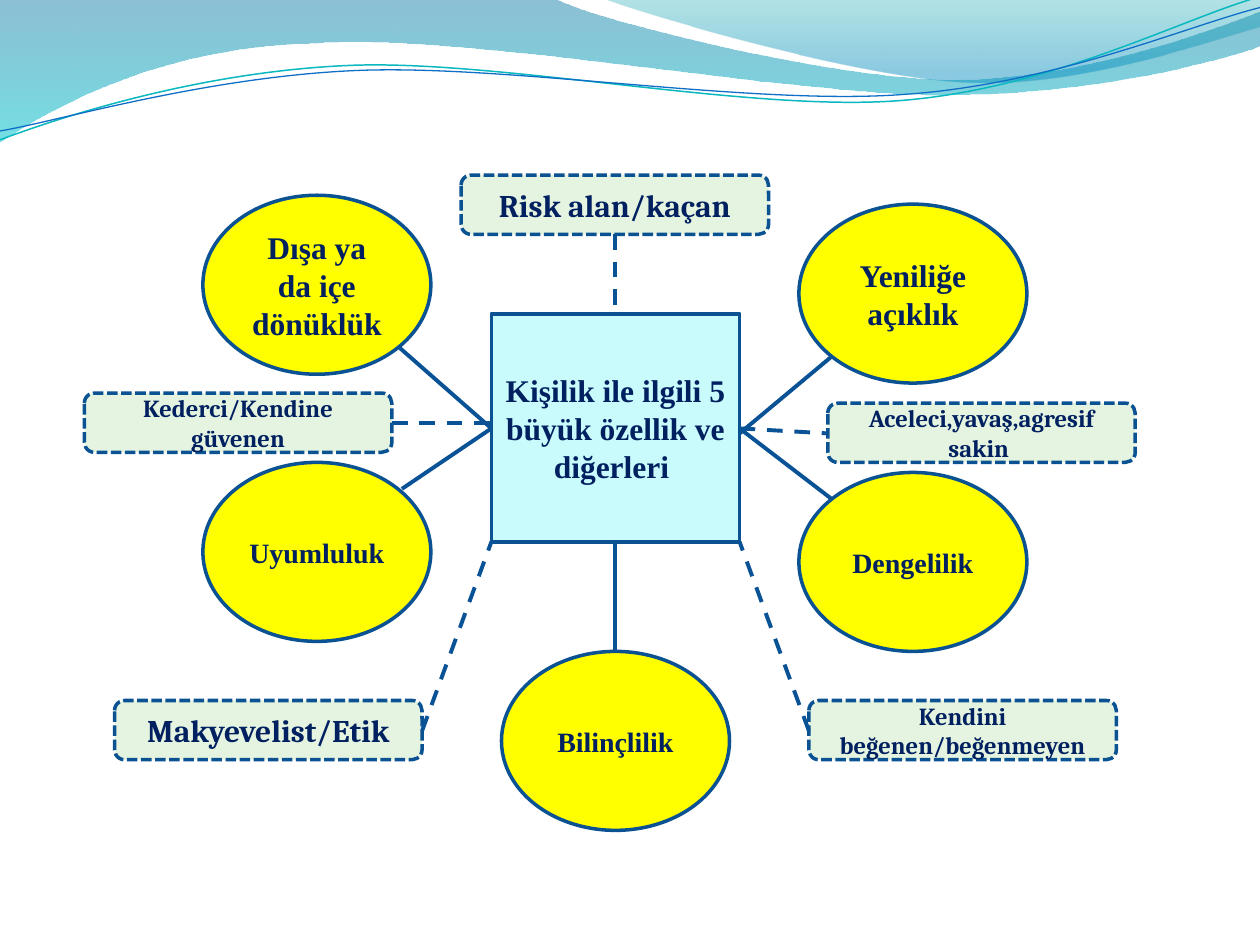
from lxml import etree
from pptx import Presentation
from pptx.dml.color import RGBColor
from pptx.enum.dml import MSO_LINE
from pptx.enum.shapes import MSO_CONNECTOR, MSO_SHAPE
from pptx.enum.text import MSO_ANCHOR, PP_ALIGN
from pptx.oxml.ns import qn
from pptx.util import Inches, Pt

RECT, OVAL, ROUND = MSO_SHAPE.RECTANGLE, MSO_SHAPE.OVAL, MSO_SHAPE.ROUNDED_RECTANGLE
DASH, DOTS = MSO_LINE.DASH, MSO_LINE.SQUARE_DOT
STRAIGHT = MSO_CONNECTOR.STRAIGHT
MIDDLE, CENTER = MSO_ANCHOR.MIDDLE, PP_ALIGN.CENTER

NAVY = RGBColor(0x00, 0x20, 0x60)
EDGE = RGBColor(0x0B, 0x52, 0x92)
LINK = RGBColor(0x09, 0x52, 0x95)
AQUA = RGBColor(0xC9, 0xFA, 0xFC)
YELLOW = RGBColor(0xFF, 0xFF, 0x00)
MINT = RGBColor(0xE5, 0xF4, 0xE0)
STEEL = RGBColor(0x00, 0x74, 0xA1)
CYAN = RGBColor(0x00, 0xC6, 0xCF)
TEAL = RGBColor(0x00, 0xA1, 0xA9)
SKY = RGBColor(0x00, 0x8B, 0xBF)
TURQUOISE = RGBColor(0x0A, 0xB8, 0xBF)
BLUE = RGBColor(0x0F, 0x6F, 0xC6)

SERIF, CAMBRIA = "Times New Roman", "Cambria"
COLS, ROWS = 10, 7.5


def write(shape, text, size=18, font=SERIF, color=NAVY, bold=True):
    """Put centred text into a shape."""
    frame = shape.text_frame
    frame.word_wrap = True
    frame.vertical_anchor = MIDDLE
    para = frame.paragraphs[0]
    para.alignment = CENTER
    run = para.add_run()
    run.text = text
    run.font.size, run.font.name, run.font.bold = Pt(size), font, bold
    run.font.color.rgb = color


class Canvas:
    """Style and current slide, measured in a grid of 10 columns by 7.5 rows."""

    def __init__(self, deck):
        self.slide = deck.slides.add_slide(deck.slide_layouts[6])
        self.shapes = self.slide.shapes
        self.unit = deck.slide_width / COLS

    def span(self, *cells):
        """Change grid cells to slide lengths."""
        return [round(cell * self.unit) for cell in cells]

    def node(self, kind, box, text, fill, dash=None, **style):
        """Add an outlined shape with text."""
        shape = self.shapes.add_shape(kind, *self.span(*box))
        shape.shadow.inherit = False
        shape.fill.solid()
        shape.fill.fore_color.rgb = fill
        shape.line.color.rgb = EDGE
        shape.line.width = Pt(2)
        if dash:
            shape.line.dash_style = dash
        write(shape, text, **style)

    def trait(self, col, row, text, size=16):
        """Add a yellow oval for a main trait."""
        self.node(OVAL, (col, row, 1.81, 1.42), text, YELLOW, size=size)

    def tag(self, col, row, text, size=14):
        """Add a dashed label for a further trait."""
        self.node(ROUND, (col, row, 2.44, 0.47), text, MINT, DOTS, size=size, font=CAMBRIA)

    def link(self, start, end, dash=None):
        """Join two points with a line."""
        line = self.shapes.add_connector(STRAIGHT, *self.span(*start, *end))
        line.line.color.rgb = LINK
        line.line.width = Pt(2.25)
        if dash:
            line.line.dash_style = dash
        etree.SubElement(line._element.spPr, qn("a:effectLst"))

    def curve(self, start, parts, closed):
        """Add a freeform whose six-number parts are cubic curves."""
        points = [self.span(*part[i:i + 2]) for part in parts for i in range(0, len(part), 2)]
        build = self.shapes.build_freeform(*self.span(*start))
        build.add_line_segments(points, close=closed)
        shape = build.convert_to_shape()
        shape.shadow.inherit = False
        steps = iter(list(shape._element.spPr.iter(qn("a:lnTo"))))
        for part in parts:
            first = next(steps)
            if len(part) == 6:
                first.tag = qn("a:cubicBezTo")
                for step in (next(steps), next(steps)):
                    first.append(step[0])
                    step.getparent().remove(step)
        return shape

    def wave(self, start, parts, stops):
        """Add a filled wave with a see-through gradient running down."""
        shape = self.curve(start, parts, True)
        shape.line.fill.background()
        shape.fill.gradient()
        shape.fill.gradient_angle = 270
        for stop, (place, color, _) in zip(shape.fill.gradient_stops, stops):
            stop.position = place
            stop.color.rgb = color
        tints = list(shape._element.spPr.iter(qn("a:srgbClr")))
        for tint, (_, _, alpha) in zip(tints, stops):
            etree.SubElement(tint, qn("a:alpha"), val=str(alpha * 1000))

    def thread(self, start, parts, color, width):
        """Add a thin open curve."""
        shape = self.curve(start, parts, False)
        shape.fill.background()
        shape.line.color.rgb = color
        shape.line.width = Pt(width)


def main():
    """Build and save the slide."""
    deck = Presentation()
    deck.slide_width, deck.slide_height = Inches(COLS), Inches(ROWS)
    page = Canvas(deck)

    page.wave((0, 0), [
        (4.4, -0.01), (4.76, 0.17, 6.64, 0.63, 7.58, 0.63),
        (8.53, 0.63, 9.58, 0.26, 10, 0.09), (10.01, 0.36),
        (9.83, 0.44, 8.7, 0.76, 7.46, 0.75), (6.22, 0.75, 3.82, 0.28, 2.57, 0.34),
        (1.29, 0.36, 0.46, 0.83, -0.01, 1.13),
    ], [(0, STEEL, 45), (1, CYAN, 55)])
    page.wave((4.79, -0.01), [
        (5.09, 0.11, 6.82, 0.62, 7.69, 0.65), (8.56, 0.69, 9.61, 0.32, 10, 0.21), (10, 0),
    ], [(0, TEAL, 30), (0.8, SKY, 45)])
    page.thread((0, 1.11), [
        (0.48, 0.93, 1.58, 0.57, 2.77, 0.52), (3.95, 0.47, 5.93, 0.89, 7.13, 0.8),
        (8.33, 0.71, 9.38, 0.15, 9.98, -0.02),
    ], TURQUOISE, 0.85)
    page.thread((0, 1.04), [
        (0.47, 0.96, 1.64, 0.61, 2.83, 0.56), (4.03, 0.51, 5.97, 0.84, 7.17, 0.75),
        (8.36, 0.67, 9.41, 0.21, 10, 0.06),
    ], BLUE, 0.75)

    left, right, top, low, mid = 3.9, 5.87, 2.49, 4.3, 4.88
    page.node(RECT, (left, top, right - left, low - top),
              "Kişilik ile ilgili 5 büyük özellik ve diğerleri ", AQUA)

    page.trait(1.61, 1.55, "Dışa ya da içe dönüklük", 18)
    page.trait(1.61, 3.67, "Uyumluluk")
    page.trait(6.34, 1.62, "Yeniliğe açıklık", 18)
    page.trait(6.34, 3.75, "Dengelilik")
    page.trait(3.98, 5.17, "Bilinçlilik")

    page.tag(0.67, 3.12, "Kederci/Kendine güvenen")
    page.tag(0.91, 5.56, "Makyevelist/Etik", 18)
    page.tag(6.42, 5.56, "Kendini beğenen/beğenmeyen")
    page.tag(3.66, 1.39, "Risk alan/kaçan", 18)
    page.tag(6.57, 3.2, "Aceleci,yavaş,agresif sakin ")

    for start, end in [
        ((3.16, 2.75), (left, 3.4)), ((3.19, 3.88), (left, 3.4)),
        ((mid, 5.17), (mid, low)),
        ((6.6, 3.96), (right, 3.4)), ((6.6, 2.83), (right, 3.44)),
    ]:
        page.link(start, end)
    for start, end in [
        ((3.35, 5.8), (left, low)), ((3.11, 3.36), (left, 3.36)),
        ((6.42, 5.8), (right, low)), ((mid, 1.86), (mid, top)),
        ((right, 3.4), (6.57, 3.44)),
    ]:
        page.link(start, end, DASH)

    deck.save("out.pptx")


if __name__ == "__main__":
    main()
